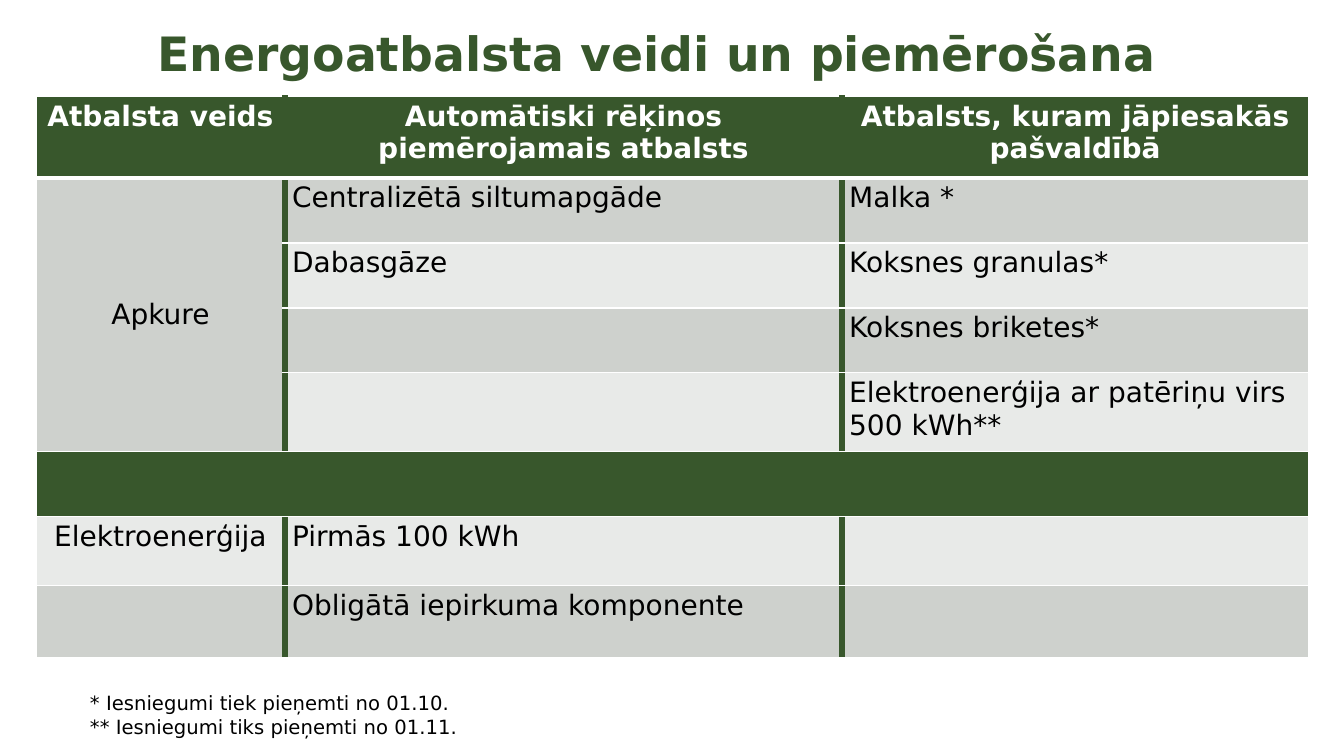
from pptx import Presentation, util as u
from pptx.dml.color import RGBColor
from pptx.enum import text as t
from pptx.oxml import parse_xml
from pptx.oxml.ns import nsdecls

FONT = "DejaVu Sans"
GREEN, WHITE, BLACK = "38572C", "FFFFFF", "000000"
DARK, LIGHT = "CED1CD", "E8EAE8"
MID = t.MSO_ANCHOR.MIDDLE
LEFT, CENTER = t.PP_ALIGN.LEFT, t.PP_ALIGN.CENTER

COLS = [249, 557, 466]
ROWS = [82, 65, 65, 65, 79, 65, 69, 72]
FILLS = [GREEN, DARK, LIGHT, DARK, LIGHT, GREEN, LIGHT, DARK]
CELLS = [
    ["Atbalsta veids", "Automātiski rēķinos piemērojamais atbalsts",
     "Atbalsts, kuram jāpiesakās pašvaldībā"],
    ["Apkure", "Centralizētā siltumapgāde", "Malka *"],
    ["", "Dabasgāze", "Koksnes granulas*"],
    ["", "", "Koksnes briketes*"],
    ["", "", "Elektroenerģija ar patēriņu virs 500 kWh**"],
    ["", "", ""],
    ["Elektroenerģija", "Pirmās 100 kWh", ""],
    ["", "Obligātā iepirkuma komponente", ""],
]
NOTES = ["* Iesniegumi tiek pieņemti no 01.10.",
         "** Iesniegumi tiks pieņemti no 01.11."]


def px(n):
    return u.Emu(round(n * 914400 / 100.8))


def color(code):
    return RGBColor.from_string(code)


def add_run(para, words, size, code, bold=False):
    run = para.add_run()
    run.text = words
    font = run.font
    font.name, font.size, font.bold = FONT, u.Pt(size), bold
    font.color.rgb = color(code)


def add_text(slide, box, lines, size, code, bold=False, align=LEFT):
    frame = slide.shapes.add_textbox(*map(px, box)).text_frame
    frame.word_wrap = True
    for i, line in enumerate(lines):
        para = frame.paragraphs[0] if i == 0 else frame.add_paragraph()
        para.alignment = align
        add_run(para, line, size, code, bold)
    return frame


def add_edge(cell, side, code, width):
    cell._tc.get_or_add_tcPr().append(parse_xml(
        f'<a:{side} {nsdecls("a")} w="{u.Pt(width)}"><a:solidFill>'
        f'<a:srgbClr val="{code}"/></a:solidFill></a:{side}>'))


def style_cell(cell, row, col):
    # Edges come before the fill in the cell's XML
    thin, thick = (WHITE, 1), (GREEN, 4.5)
    add_edge(cell, "lnL", *(thick if col else thin))
    add_edge(cell, "lnR", *(thin if col == len(COLS) - 1 else thick))
    add_edge(cell, "lnT", WHITE, 3 if row == 1 else 1)
    add_edge(cell, "lnB", WHITE, 1 if row else 3)
    cell.fill.solid()
    cell.fill.fore_color.rgb = color(FILLS[row])
    cell.margin_left = cell.margin_right = px(7)
    cell.margin_top = cell.margin_bottom = px(4)


def add_grid(slide, left, top):
    table = slide.shapes.add_table(
        len(ROWS), len(COLS), px(left), px(top),
        px(sum(COLS)), px(sum(ROWS))).table
    for col, width in zip(table.columns, COLS):
        col.width = px(width)
    for row, height in zip(table.rows, ROWS):
        row.height = px(height)
    for r, words in enumerate(CELLS):
        for c, word in enumerate(words):
            cell = table.cell(r, c)
            style_cell(cell, r, c)
            if word:
                head = r == 0
                para = cell.text_frame.paragraphs[0]
                para.alignment = CENTER if head or c == 0 else LEFT
                add_run(para, word, 20, WHITE if head else BLACK, head)
    # Heating spans four rows
    heat = table.cell(1, 0)
    heat.merge(table.cell(4, 0))
    heat.vertical_anchor = MID


def main():
    deck = Presentation()
    deck.slide_width, deck.slide_height = u.Inches(13.33), u.Inches(7.5)
    slide = deck.slides.add_slide(deck.slide_layouts[6])

    # Title
    title = add_text(slide, (21, 12, 1272, 88),
                     ["Energoatbalsta veidi un piemērošana"],
                     33.8, GREEN, True, CENTER)
    title.vertical_anchor = MID
    title.paragraphs[0].line_spacing = 0.9
    title.paragraphs[0].space_before = u.Pt(10)

    # Support table
    add_grid(slide, 36, 96)

    # Footnotes
    add_text(slide, (80, 686, 658, 57), NOTES, 14, BLACK)

    deck.save("out.pptx")


if __name__ == "__main__":
    main()
